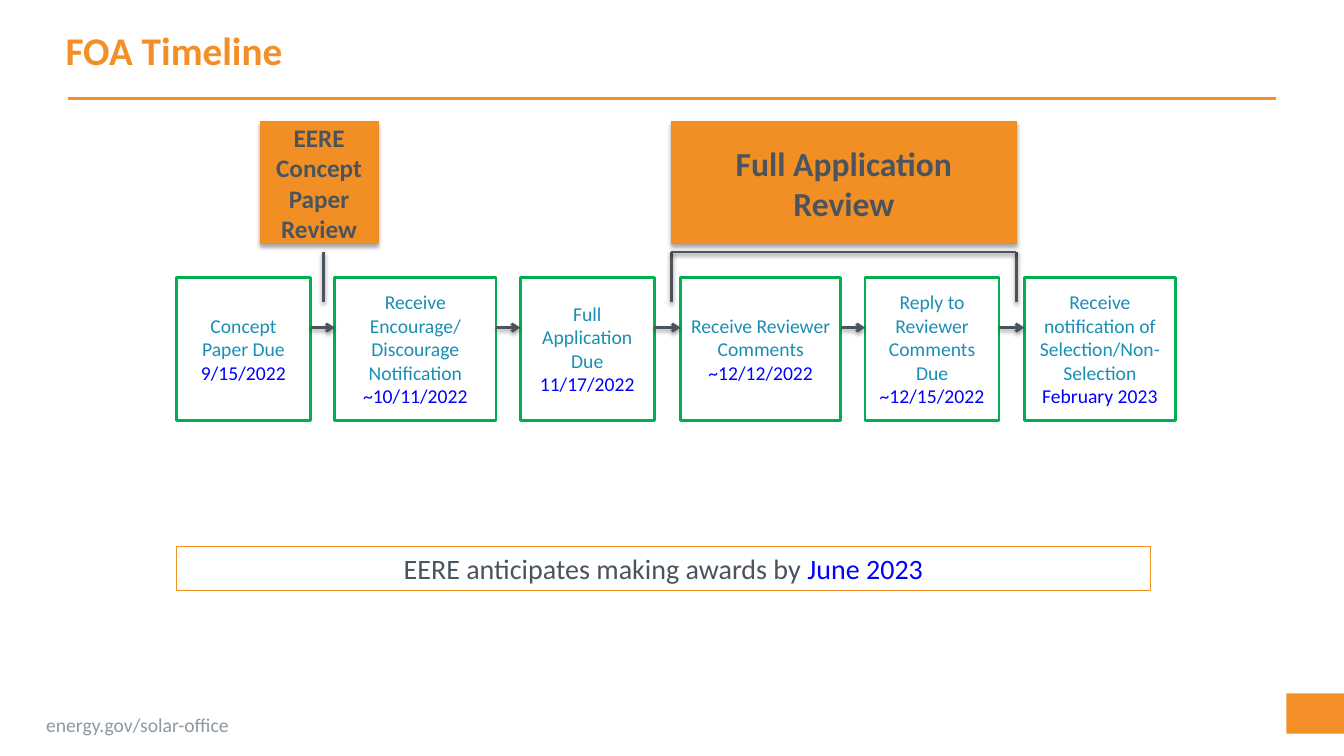
from itertools import pairwise

from lxml import etree
from pptx import Presentation
from pptx.dml.color import RGBColor
from pptx.enum.shapes import MSO_CONNECTOR, MSO_SHAPE
from pptx.enum.text import MSO_ANCHOR, MSO_AUTO_SIZE, PP_ALIGN
from pptx.oxml import parse_xml
from pptx.oxml.ns import nsdecls, qn
from pptx.util import Inches, Pt

ORANGE, BANNER, BANNER_EDGE = "F38F26", "F18F25", "F18C1F"
SLATE, TEAL, BLUE = "4B545D", "1B8EB4", "0000FF"
GREEN, GREY, WHITE = "00B050", "8D98A3", "FFFFFF"

STEP_TOP, STEP_HEIGHT, ARROW_Y = 2.75, 1.42, 3.25
BANNER_TOP, BANNER_HEIGHT = 1.21, 1.21
BRACKET_TOP, BRACKET_BOTTOM = 2.5, 3

# left, width, description lines, date
STEPS = [
    (1.75, 1.33, ["Concept Paper Due"], "9/15/2022"),
    (3.32, 1.6, ["Receive Encourage/ Discourage Notification"], "~10/11/2022"),
    (5.16, 1.33, ["Full Application Due"], "11/17/2022"),
    (6.75, 1.59, ["Receive Reviewer Comments"], "~12/12/2022"),
    (8.58, 1.33, ["Reply to Reviewer Comments", "Due"], "~12/15/2022"),
    (10.16, 1.5, ["Receive notification of Selection/Non-Selection"], "February 2023"),
]


def color(hex_value):
    return RGBColor.from_string(hex_value)


def add_run(paragraph, text, size, hex_value, bold=False):
    run = paragraph.add_run()
    run.text = text
    run.font.name = "Calibri"
    run.font.size = Pt(size)
    run.font.bold = bold
    run.font.color.rgb = color(hex_value)


def fill_text(frame, paragraphs, align=PP_ALIGN.CENTER):
    """Each paragraph is a list of runs: (text, size, colour, bold)."""
    for index, runs in enumerate(paragraphs):
        paragraph = frame.add_paragraph() if index else frame.paragraphs[0]
        paragraph.alignment = align
        for run in runs:
            add_run(paragraph, *run)


def set_effects(element, blur=0, distance=0, opacity=0):
    effects = etree.SubElement(element.spPr, qn("a:effectLst"))
    if opacity:
        effects.append(parse_xml(
            f'<a:outerShdw {nsdecls("a")} blurRad="{Pt(blur)}" dist="{Pt(distance)}" '
            f'dir="5400000" rotWithShape="0"><a:srgbClr val="000000">'
            f'<a:alpha val="{opacity * 1000}"/></a:srgbClr></a:outerShdw>'))


def add_box(slide, left, top, width, height, fill=None, edge=None, weight=0.75):
    box = slide.shapes.add_shape(MSO_SHAPE.RECTANGLE, Inches(left), Inches(top),
                                 Inches(width), Inches(height))
    box.shadow.inherit = False
    if fill:
        box.fill.solid()
        box.fill.fore_color.rgb = color(fill)
    else:
        box.fill.background()
    if edge:
        box.line.color.rgb = color(edge)
        box.line.width = Pt(weight)
    else:
        box.line.fill.background()
    box.text_frame.word_wrap = True
    box.text_frame.vertical_anchor = MSO_ANCHOR.MIDDLE
    return box


def add_line(slide, x1, y1, x2, y2, hex_value=SLATE, arrow=False, shadow=True):
    line = slide.shapes.add_connector(MSO_CONNECTOR.STRAIGHT, Inches(x1), Inches(y1),
                                      Inches(x2), Inches(y2))
    line.line.color.rgb = color(hex_value)
    line.line.width = Pt(2)
    if arrow:
        etree.SubElement(line.line._get_or_add_ln(), qn("a:tailEnd"), type="arrow")
    if shadow:
        set_effects(line._element, 3.1, 1.6, 38)
    else:
        set_effects(line._element)


def add_banner(slide, left, width, lines, size):
    banner = add_box(slide, left, BANNER_TOP, width, BANNER_HEIGHT, BANNER, BANNER_EDGE)
    banner.shadow.inherit = True
    set_effects(banner._element, 3.1, 1.8, 35)
    fill_text(banner.text_frame, [[(line, size, SLATE, True)] for line in lines])


def add_step(slide, left, width, lines, date):
    step = add_box(slide, left, STEP_TOP, width, STEP_HEIGHT, WHITE, GREEN, 2)
    fill_text(step.text_frame,
              [[(line, 14, TEAL)] for line in lines] + [[(date, 14, BLUE)]])


def add_title(slide, text):
    title = slide.shapes.title
    title.left, title.top = Inches(0.55), Inches(0.21)
    title.width, title.height = Inches(8.5), Inches(0.75)
    title.text_frame.auto_size = MSO_AUTO_SIZE.NONE
    title.text_frame.vertical_anchor = MSO_ANCHOR.TOP
    fill_text(title.text_frame, [[(text, 28, ORANGE, True)]], PP_ALIGN.LEFT)


def add_footer(slide, text):
    footer = slide.shapes.add_textbox(Inches(0.36), Inches(7.02), Inches(2.04), Inches(0.34))
    footer.text_frame.word_wrap = False
    fill_text(footer.text_frame, [[(text, 14, GREY)]], PP_ALIGN.LEFT)


def main():
    deck = Presentation()
    deck.slide_width, deck.slide_height = Inches(13.33), Inches(7.5)
    slide = deck.slides.add_slide(deck.slide_layouts[5])

    # Page frame
    add_line(slide, 0.67, 0.98, 12.66, 0.98, ORANGE, shadow=False)
    add_box(slide, 12.76, 6.88, 0.57, 0.4, ORANGE)
    add_footer(slide, "energy.gov/solar-office")
    add_title(slide, "FOA Timeline")

    # Timeline steps and the arrows across their gaps
    for step in STEPS:
        add_step(slide, *step)
    for (left, width, *_), (next_left, *_) in pairwise(STEPS):
        add_line(slide, left + width, ARROW_Y, next_left, ARROW_Y, arrow=True)

    # Review phases
    review_left, review_width = 6.66, 3.42
    review_right = review_left + review_width
    add_banner(slide, 2.58, 1.17, ["EERE", "Concept Paper Review"], 18)
    add_banner(slide, review_left, review_width, ["Full Application Review"], 24)
    for x in (3.21, review_left, review_right):
        add_line(slide, x, BRACKET_TOP, x, BRACKET_BOTTOM)
    add_line(slide, review_left, BRACKET_TOP, review_right, BRACKET_TOP)

    # Award notice
    award = add_box(slide, 1.75, 5.42, 9.66, 0.44, edge=BANNER)
    fill_text(award.text_frame, [[("EERE anticipates making awards by ", 20, SLATE),
                                  ("June 2023", 20, BLUE)]])

    deck.save("out.pptx")


if __name__ == "__main__":
    main()
